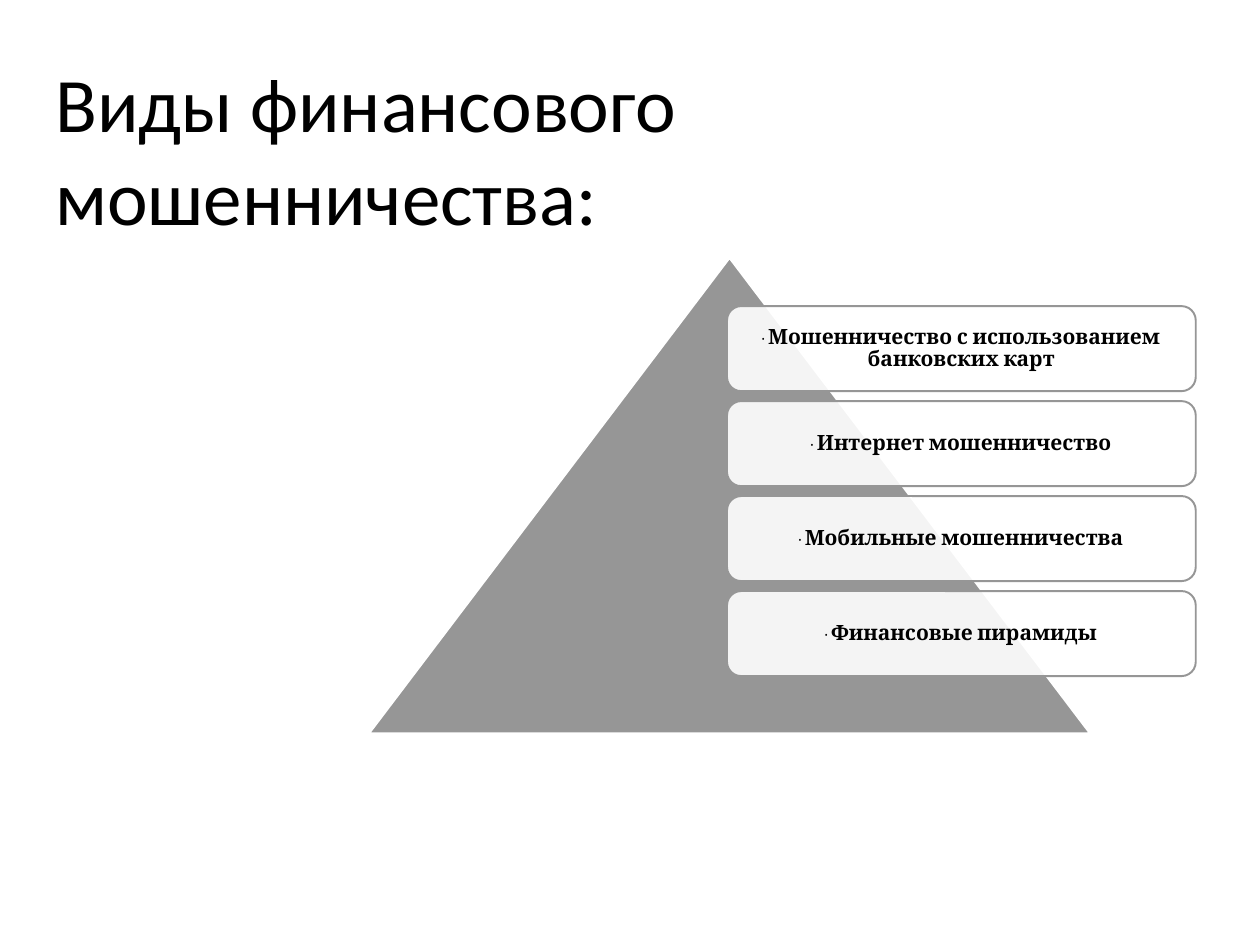
from dataclasses import dataclass

import lxml.etree
import pptx
import pptx.dml.color
import pptx.enum.shapes
import pptx.enum.text
import pptx.oxml.ns
import pptx.util
from pptx.shapes.autoshape import Shape
from pptx.slide import Slide

SHAPES = pptx.enum.shapes.MSO_SHAPE
MIDDLE = pptx.enum.text.MSO_ANCHOR.MIDDLE
CENTER = pptx.enum.text.PP_ALIGN.CENTER
WIDTH, HEIGHT = 10, 7.5
BLACK, WHITE, GRAY = "000000", "FFFFFF", "969696"
LINE_WIDTH = 1.1
CARD_TOP, CARD_PITCH = 0.324, 0.1005
FRAUD_TYPES = (
    "Мошенничество с использованием банковских карт",
    "Интернет мошенничество",
    "Мобильные мошенничества",
    "Финансовые пирамиды",
)


@dataclass(frozen=True)
class Box:
    left: float
    top: float
    width: float
    height: float

    def lengths(self) -> tuple:
        return tuple(
            pptx.util.Inches(share * size)
            for share, size in (
                (self.left, WIDTH),
                (self.top, HEIGHT),
                (self.width, WIDTH),
                (self.height, HEIGHT),
            )
        )


@dataclass(frozen=True)
class Card:
    row: int
    label: str

    def box(self) -> Box:
        return Box(0.577, CARD_TOP + self.row * CARD_PITCH, 0.372, 0.09)


def color(value: str) -> pptx.dml.color.RGBColor:
    return pptx.dml.color.RGBColor.from_string(value)


def set_font(font, name: str, size: float, bold: bool = False) -> None:
    font.name = name
    font.size = pptx.util.Pt(size)
    font.bold = bold
    font.color.rgb = color(BLACK)


def set_frame(text_frame, horizontal: float, vertical: float) -> None:
    text_frame.word_wrap = True
    text_frame.vertical_anchor = MIDDLE
    text_frame.margin_left = text_frame.margin_right = pptx.util.Inches(horizontal)
    text_frame.margin_top = text_frame.margin_bottom = pptx.util.Inches(vertical)


def draw_shape(slide: Slide, kind, box: Box, fill: str, line: str) -> Shape:
    shape = slide.shapes.add_shape(kind, *box.lengths())
    shape.shadow.inherit = False
    shape.fill.solid()
    shape.fill.fore_color.rgb = color(fill)
    shape.line.color.rgb = color(line)
    shape.line.width = pptx.util.Pt(LINE_WIDTH)
    return shape


def set_opacity(shape: Shape, percent: int) -> None:
    qualified = pptx.oxml.ns.qn
    fill = shape.element.spPr.find(qualified("a:solidFill"))
    lxml.etree.SubElement(fill[0], qualified("a:alpha"), val=str(percent * 1000))


def draw_title(slide: Slide, text: str) -> None:
    shape = slide.shapes.add_textbox(*Box(0.034, 0.039, 0.932, 0.236).lengths())
    set_frame(shape.text_frame, 0.1, 0.1)
    shape.text_frame.text = text
    set_font(shape.text_frame.paragraphs[0].runs[0].font, "Calibri", 44)


def draw_card(slide: Slide, card: Card) -> None:
    shape = draw_shape(slide, SHAPES.ROUNDED_RECTANGLE, card.box(), WHITE, GRAY)
    set_opacity(shape, 90)
    set_frame(shape.text_frame, 0.06, 0.04)
    paragraph = shape.text_frame.paragraphs[0]
    paragraph.alignment = CENTER
    paragraph.line_spacing = 0.9
    for text, size, bold in (("· ", 10, False), (card.label, 12, True)):
        run = paragraph.add_run()
        run.text = text
        set_font(run.font, "Cambria", size, bold)


def main() -> None:
    presentation = pptx.Presentation()
    presentation.slide_width = pptx.util.Inches(WIDTH)
    presentation.slide_height = pptx.util.Inches(HEIGHT)
    slide = presentation.slides.add_slide(presentation.slide_layouts[6])
    draw_title(slide, "Виды финансового мошенничества:")
    pyramid = Box(0.293, 0.273, 0.572, 0.503)
    draw_shape(slide, SHAPES.ISOSCELES_TRIANGLE, pyramid, GRAY, WHITE)
    for row, label in enumerate(FRAUD_TYPES):
        draw_card(slide, Card(row, label))
    presentation.save("out.pptx")


if __name__ == "__main__":
    main()
